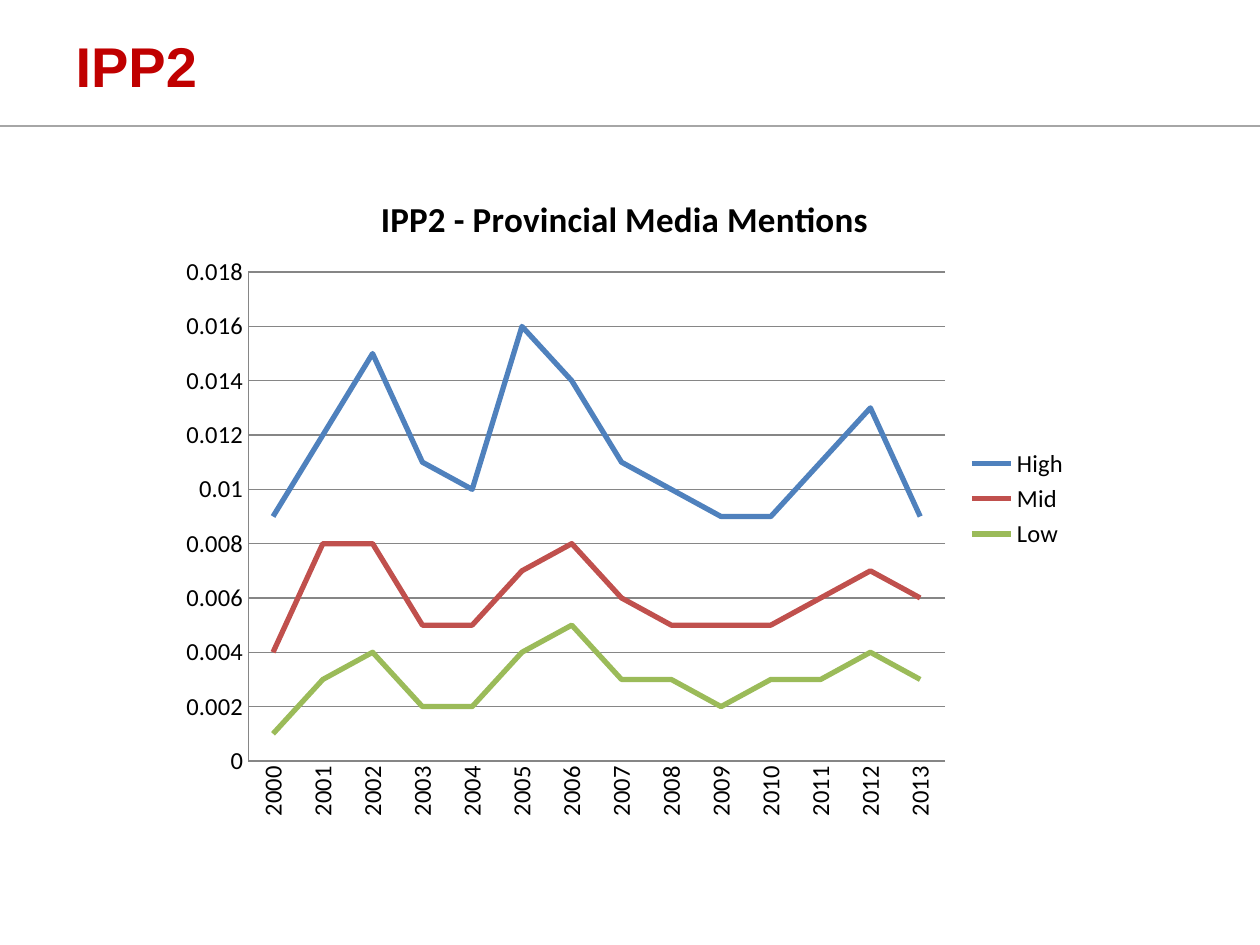
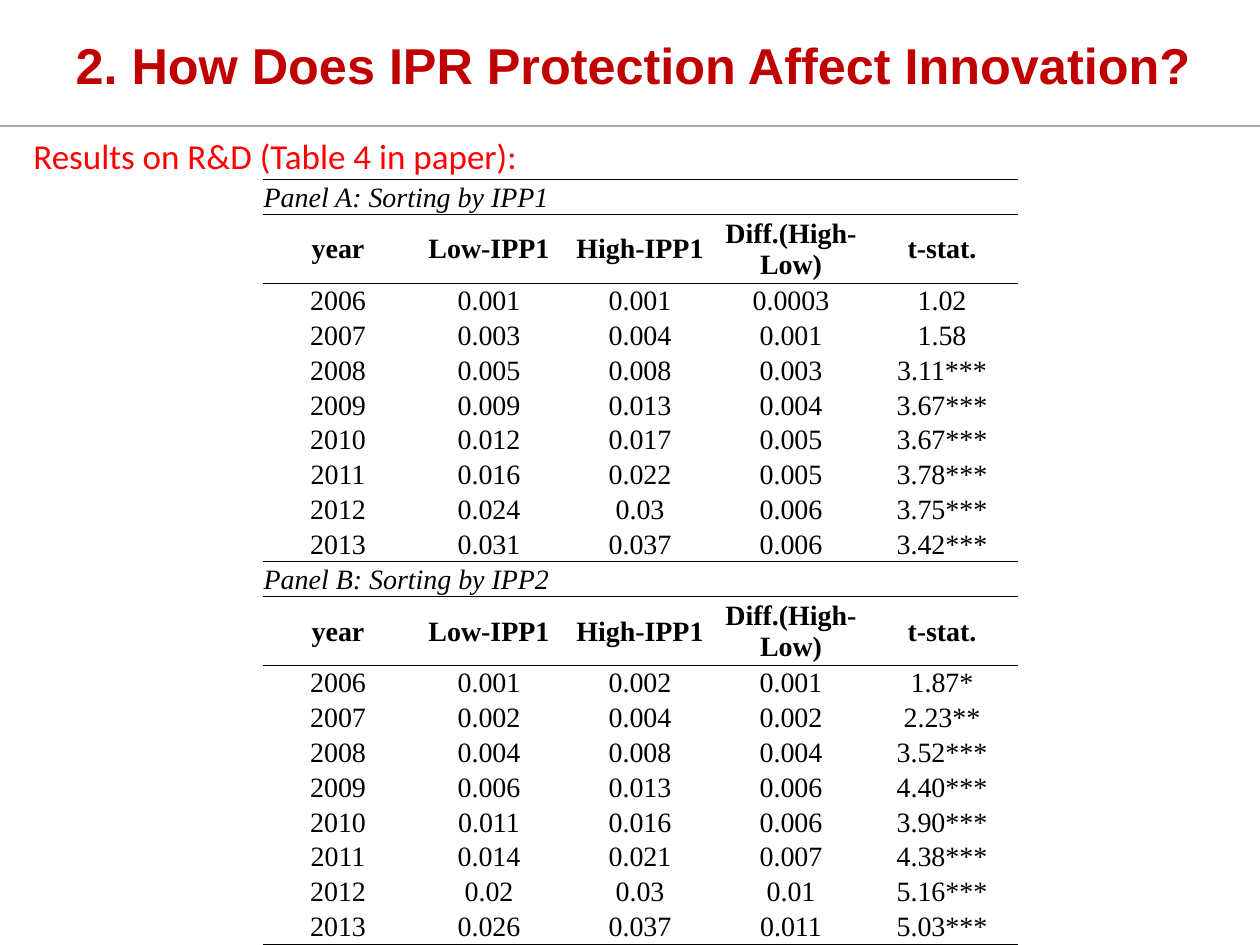
from dataclasses import dataclass

from lxml.etree import SubElement
from pptx import Presentation
from pptx.chart.data import CategoryChartData
from pptx.dml.color import RGBColor
from pptx.enum.chart import XL_CHART_TYPE, XL_LEGEND_POSITION, XL_MARKER_STYLE, XL_TICK_MARK
from pptx.enum.shapes import MSO_CONNECTOR
from pptx.enum.text import MSO_ANCHOR, MSO_AUTO_SIZE, PP_ALIGN
from pptx.oxml.ns import qn
from pptx.util import Pt

COLORS = {
    "title": "C00000", "rule": "A6A6A6", "text": "000000", "caption": "FF0000",
    "grid": "868686", "High": "4F81BD", "Mid": "C0504D", "Low": "9BBB59",
}
SLIDE_WIDTH, SLIDE_HEIGHT = 720, 540
RULE_TOP = 72
TITLE_LEFT, TITLE_TOP = 36, 2
CHART_LEFT, CHART_TOP, CHART_WIDTH, CHART_HEIGHT = 96, 96, 522, 378
PLOT_LEFT, PLOT_TOP, PLOT_WIDTH, PLOT_HEIGHT = 45.8, 59.5, 398.3, 279.4
TABLE_LEFT, TABLE_TOP = 150, 102.6
COLUMN_WIDTH, ROW_HEIGHT, HEADER_HEIGHT = 86.3, 19.9, 39.3
TABLE_SIZE = 16
NO_STYLE_NO_GRID = "{2D5ABB26-0587-4C30-8999-92F81FD0307C}"
HEADERS = ("year", "Low-IPP1", "High-IPP1", "Diff.(High-Low)", "t-stat.")


@dataclass(frozen=True)
class Panel:
    heading: str
    rows: tuple[tuple[str, ...], ...]
    top_line: float = 0.5


@dataclass(frozen=True)
class Series:
    name: str
    thousandths: tuple[int, ...]


SERIES = (
    Series("High", (9, 12, 15, 11, 10, 16, 14, 11, 10, 9, 9, 11, 13, 9)),
    Series("Mid", (4, 8, 8, 5, 5, 7, 8, 6, 5, 5, 5, 6, 7, 6)),
    Series("Low", (1, 3, 4, 2, 2, 4, 5, 3, 3, 2, 3, 3, 4, 3)),
)
PANELS = (
    Panel("Panel A: Sorting by IPP1", (
        ("2006", "0.001", "0.001", "0.0003", "1.02"),
        ("2007", "0.003", "0.004", "0.001", "1.58"),
        ("2008", "0.005", "0.008", "0.003", "3.11***"),
        ("2009", "0.009", "0.013", "0.004", "3.67***"),
        ("2010", "0.012", "0.017", "0.005", "3.67***"),
        ("2011", "0.016", "0.022", "0.005", "3.78***"),
        ("2012", "0.024", "0.03", "0.006", "3.75***"),
        ("2013", "0.031", "0.037", "0.006", "3.42***"),
    ), top_line=1),
    Panel("Panel B: Sorting by IPP2", (
        ("2006", "0.001", "0.002", "0.001", "1.87*"),
        ("2007", "0.002", "0.004", "0.002", "2.23**"),
        ("2008", "0.004", "0.008", "0.004", "3.52***"),
        ("2009", "0.006", "0.013", "0.006", "4.40***"),
        ("2010", "0.011", "0.016", "0.006", "3.90***"),
        ("2011", "0.014", "0.021", "0.007", "4.38***"),
        ("2012", "0.02", "0.03", "0.01", "5.16***"),
        ("2013", "0.026", "0.037", "0.011", "5.03***"),
    )),
)


def color(name: str) -> RGBColor:
    return RGBColor.from_string(COLORS[name])


def style_font(font, name: str, size: float, color_name: str = "text",
               bold: bool = False, italic: bool = False) -> None:
    font.name, font.size = name, Pt(size)
    font.bold, font.italic = bold, italic
    font.color.rgb = color(color_name)


def add_titled_slide(presentation, text: str, size: float, width: float):
    """Add a slide with the shared title style and the rule below it."""
    slide = presentation.slides.add_slide(presentation.slide_layouts[5])
    rule = slide.shapes.add_connector(
        MSO_CONNECTOR.STRAIGHT, 0, Pt(RULE_TOP), Pt(SLIDE_WIDTH), Pt(RULE_TOP))
    rule.line.color.rgb = color("rule")
    rule.line.width = Pt(1)
    SubElement(rule._element.spPr, qn("a:effectLst"))

    title = slide.shapes.title
    title.left, title.top = Pt(TITLE_LEFT), Pt(TITLE_TOP)
    title.width, title.height = Pt(width), Pt(RULE_TOP - TITLE_TOP)
    frame = title.text_frame
    frame.text = text
    frame.vertical_anchor = MSO_ANCHOR.MIDDLE
    frame.auto_size = MSO_AUTO_SIZE.NONE
    paragraph = frame.paragraphs[0]
    paragraph.alignment = PP_ALIGN.LEFT
    style_font(paragraph.font, "Arial", size, "title", bold=True)
    return slide


def place_plot(chart) -> None:
    """Fix the inner plot area as fractions of the chart."""
    plot_area = chart._chartSpace.chart.plotArea
    layout = plot_area.find(qn("c:layout"))
    if layout is None:
        layout = SubElement(plot_area, qn("c:layout"))
        plot_area.insert(0, layout)
    manual = SubElement(layout, qn("c:manualLayout"))
    settings = {
        "layoutTarget": "inner", "xMode": "edge", "yMode": "edge",
        "x": PLOT_LEFT / CHART_WIDTH, "y": PLOT_TOP / CHART_HEIGHT,
        "w": PLOT_WIDTH / CHART_WIDTH, "h": PLOT_HEIGHT / CHART_HEIGHT,
    }
    for tag, value in settings.items():
        SubElement(manual, qn(f"c:{tag}"), val=str(value))


def add_mentions_chart(slide) -> None:
    data = CategoryChartData()
    data.categories = [str(year) for year in range(2000, 2014)]
    for series in SERIES:
        data.add_series(series.name, [value / 1000 for value in series.thousandths])
    chart = slide.shapes.add_chart(
        XL_CHART_TYPE.LINE, Pt(CHART_LEFT), Pt(CHART_TOP),
        Pt(CHART_WIDTH), Pt(CHART_HEIGHT), data).chart
    style_font(chart.font, "Calibri", 10)
    place_plot(chart)

    # Title and legend
    chart.has_title = True
    chart.chart_title.include_in_layout = False
    chart.chart_title.text_frame.text = "IPP2 - Provincial Media Mentions"
    style_font(chart.chart_title.text_frame.paragraphs[0].font, "Calibri", 20, bold=True)
    chart.has_legend = True
    chart.legend.position = XL_LEGEND_POSITION.RIGHT
    chart.legend.include_in_layout = False
    style_font(chart.legend.font, "Calibri", 14)

    # Axes
    for axis in (chart.category_axis, chart.value_axis):
        axis.major_tick_mark = axis.minor_tick_mark = XL_TICK_MARK.NONE
        style_font(axis.tick_labels.font, "Calibri", 14)
        axis.format.line.color.rgb = color("grid")
        axis.format.line.width = Pt(0.75)
    labels = chart.category_axis._element.find(qn("c:txPr"))
    labels.find(qn("a:bodyPr")).set("rot", "-5400000")
    value_axis = chart.value_axis
    value_axis.minimum_scale, value_axis.maximum_scale = 0, 0.018
    value_axis.major_unit = 0.002
    value_axis.has_major_gridlines = True
    value_axis.major_gridlines.format.line.color.rgb = color("grid")
    value_axis.major_gridlines.format.line.width = Pt(0.75)

    # Lines
    plot = chart.plots[0]
    plot.vary_by_categories = False
    for series in plot.series:
        series.smooth = False
        series.marker.style = XL_MARKER_STYLE.NONE
        series.format.line.color.rgb = color(series.name)
        series.format.line.width = Pt(3)


def add_caption(slide, text: str) -> None:
    box = slide.shapes.add_textbox(Pt(12), Pt(73.5), Pt(294), Pt(31.5))
    frame = box.text_frame
    frame.text = text
    frame.word_wrap = False
    frame.auto_size = MSO_AUTO_SIZE.SHAPE_TO_FIT_TEXT
    style_font(frame.paragraphs[0].font, "Calibri", 20, "caption")


def set_borders(cell, top: float, bottom: float) -> None:
    """Set the top and bottom borders; a width of 0 means no line."""
    properties = cell._tc.get_or_add_tcPr()
    for index, (tag, width) in enumerate((("a:lnT", top), ("a:lnB", bottom))):
        line = SubElement(properties, qn(tag), w=str(Pt(width)))
        if width:
            fill = SubElement(line, qn("a:solidFill"))
            SubElement(fill, qn("a:srgbClr"), val=COLORS["text"])
        else:
            SubElement(line, qn("a:noFill"))
        properties.insert(index, line)


def fill_row(table, row: int, texts: tuple[str, ...], top: float = 0, bottom: float = 0,
             bold: bool = False, italic: bool = False,
             alignment: PP_ALIGN = PP_ALIGN.CENTER) -> None:
    for column, text in enumerate(texts):
        cell = table.cell(row, column)
        cell.text = text
        cell.margin_left = cell.margin_right = cell.margin_top = Pt(0.7)
        cell.margin_bottom = 0
        cell.vertical_anchor = MSO_ANCHOR.MIDDLE
        cell.fill.background()
        paragraph = cell.text_frame.paragraphs[0]
        paragraph.alignment = alignment
        style_font(paragraph.font, "Times New Roman", TABLE_SIZE, bold=bold, italic=italic)
        if not text:
            SubElement(paragraph._p, qn("a:endParaRPr"), sz=str(TABLE_SIZE * 100))
        set_borders(cell, top, bottom)


def add_results_table(slide) -> None:
    row_count = sum(len(panel.rows) + 2 for panel in PANELS)
    height = row_count * ROW_HEIGHT + len(PANELS) * (HEADER_HEIGHT - ROW_HEIGHT)
    table = slide.shapes.add_table(
        row_count, len(HEADERS), Pt(TABLE_LEFT), Pt(TABLE_TOP),
        Pt(COLUMN_WIDTH * len(HEADERS)), Pt(height)).table
    table.first_row = table.horz_banding = False
    table._tbl.tblPr.find(qn("a:tableStyleId")).text = NO_STYLE_NO_GRID
    for column in table.columns:
        column.width = Pt(COLUMN_WIDTH)
    for table_row in table.rows:
        table_row.height = Pt(ROW_HEIGHT)

    row = 0
    for panel in PANELS:
        heading = (panel.heading,) + ("",) * (len(HEADERS) - 1)
        fill_row(table, row, heading, panel.top_line, 0.5,
                 italic=True, alignment=PP_ALIGN.LEFT)
        table.cell(row, 0).merge(table.cell(row, 1))
        fill_row(table, row + 1, HEADERS, 0.5, 0.5, bold=True)
        table.rows[row + 1].height = Pt(HEADER_HEIGHT)
        row += 2
        for values in panel.rows:
            fill_row(table, row, values,
                     top=0.5 if values is panel.rows[0] else 0,
                     bottom=0.5 if values is panel.rows[-1] else 0)
            row += 1


def main() -> None:
    presentation = Presentation()
    presentation.slide_width, presentation.slide_height = Pt(SLIDE_WIDTH), Pt(SLIDE_HEIGHT)

    # Media mentions
    slide = add_titled_slide(presentation, "IPP2", 32, 648)
    add_mentions_chart(slide)

    # Results on R&D
    slide = add_titled_slide(
        presentation, "2. How Does IPR Protection Affect Innovation?", 28.8, 684)
    add_caption(slide, "Results on R&D (Table 4 in paper):")
    add_results_table(slide)

    presentation.save("out.pptx")


if __name__ == "__main__":
    main()
